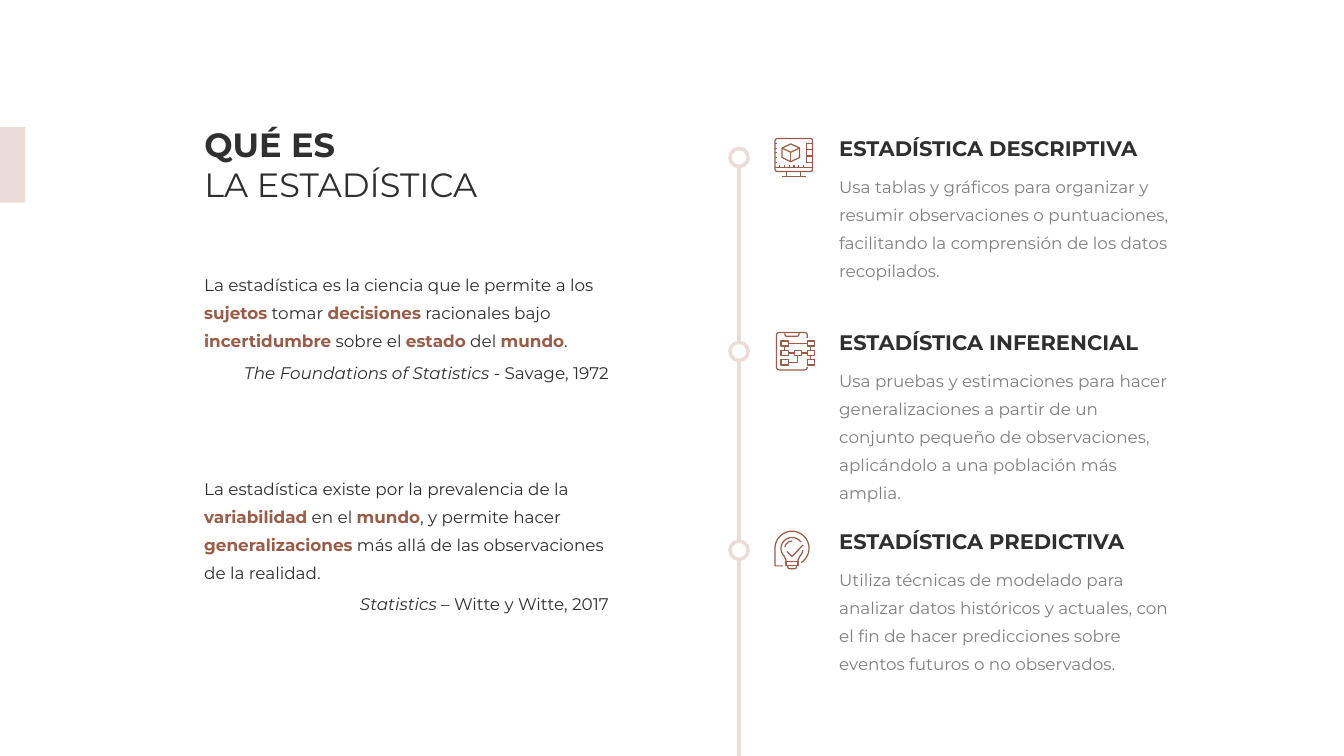
from math import cos, radians, sin

from lxml import etree
from pptx import Presentation
from pptx.dml.color import RGBColor
from pptx.enum.shapes import MSO_CONNECTOR, MSO_SHAPE
from pptx.enum.text import MSO_ANCHOR, MSO_AUTO_SIZE, PP_ALIGN
from pptx.oxml.ns import qn
from pptx.util import Pt

LEFT, RIGHT = PP_ALIGN.LEFT, PP_ALIGN.RIGHT
TOP, MIDDLE = MSO_ANCHOR.TOP, MSO_ANCHOR.MIDDLE
NO_AUTOSIZE = MSO_AUTO_SIZE.NONE
RECTANGLE, OVAL = MSO_SHAPE.RECTANGLE, MSO_SHAPE.OVAL
STRAIGHT = MSO_CONNECTOR.STRAIGHT

INK = RGBColor(0x2F, 0x2F, 0x2F)
GRAY = RGBColor(0x7F, 0x7F, 0x7F)
BROWN = RGBColor(0x99, 0x5C, 0x49)
BLUSH = RGBColor(0xEC, 0xDC, 0xD7)
WHITE = RGBColor(0xFF, 0xFF, 0xFF)

TITLE = {"name": "Montserrat", "size": Pt(48), "bold": True}
SUBTITLE = {**TITLE, "bold": False}
HEADING = {**TITLE, "size": Pt(30)}
BODY = {"name": "Montserrat", "size": Pt(24), "bold": False}
STRONG = {**BODY, "bold": True}
ITALIC = {**BODY, "italic": True}
SINGLE = {"alignment": LEFT}
SPACED = {"alignment": LEFT, "line_spacing": Pt(40), "space_before": Pt(4.8)}
SPACED_RIGHT = {**SPACED, "alignment": RIGHT}

QUOTES = [
    (378, 170, "La estadística es la ciencia que le permite a los *sujetos* tomar "
     "*decisiones* racionales bajo *incertidumbre* sobre el *estado* del *mundo*.",
     "The Foundations of Statistics ", "- Savage, 1972"),
    (669, 211, "La estadística existe por la prevalencia de la *variabilidad* en el "
     "*mundo*, y permite hacer *generalizaciones* más allá de las observaciones "
     "de la realidad.",
     "Statistics ", "– Witte y Witte, 2017"),
]


def set_format(target, values):
    for name, value in values.items():
        setattr(target, name, value)


def write_paragraph(paragraph, runs, layout):
    set_format(paragraph, layout)
    for text, style, color in runs:
        run = paragraph.add_run()
        run.text = text
        set_format(run.font, style)
        run.font.color.rgb = color


def write_text(shape, paragraphs, wrap=True, anchor=TOP):
    frame = shape.text_frame
    set_format(frame, {"word_wrap": wrap, "vertical_anchor": anchor,
                       "auto_size": NO_AUTOSIZE})
    for index, (runs, layout) in enumerate(paragraphs):
        paragraph = frame.add_paragraph() if index else frame.paragraphs[0]
        write_paragraph(paragraph, runs, layout)


def add_textbox(slide, box, paragraphs, **options):
    write_text(slide.shapes.add_textbox(*map(Pt, box)), paragraphs, **options)


def add_shape(slide, kind, box, fill, line=None):
    shape = slide.shapes.add_shape(kind, *map(Pt, box))
    shape.shadow.inherit = False
    shape.fill.solid()
    shape.fill.fore_color.rgb = fill
    if line:
        shape.line.color.rgb = line
        shape.line.width = Pt(5)
    else:
        shape.line.fill.background()


def arc(x, y, radius, start, end):
    steps = max(3, abs(end - start) // 6)
    angles = [radians(start + (end - start) * i / steps) for i in range(steps + 1)]
    return [(x + radius * cos(a), y + radius * sin(a)) for a in angles]


def rectangle(left, top, right, bottom):
    return [(left, top), (right, top), (right, bottom), (left, bottom), (left, top)]


def rounded(left, top, right, bottom, radius):
    return (arc(right - radius, top + radius, radius, 0, -90)
            + arc(left + radius, top + radius, radius, 270, 180)
            + arc(left + radius, bottom - radius, radius, 180, 90)
            + arc(right - radius, bottom - radius, radius, 90, 0))


def monitor_strokes():
    screen = rounded(1, 1, 54.5, 48, 3)
    ticks = [[(1, 7.9 + 6.75 * i), (3.6, 7.9 + 6.75 * i)] for i in range(5)]
    ticks += [[(7.6 + 6.75 * i, 39), (7.6 + 6.75 * i, 42)] for i in range(6)]
    panel = [[(54.5, 8), (45.7, 8), (45.7, 35), (54.5, 35)]]
    panel += [[(45.7, y), (54.5, y)] for y in (17, 26)]
    stand = [[(x, 48), (x, 55)] for x in (17.6, 37.8)] + [[(10.8, 55), (45, 55)]]
    cube = [[(23.3, 8.6), (36, 14.5), (36, 28), (23.3, 34), (11, 28), (11, 14.5),
             (23.3, 8.6)],
            [(11, 14.5), (23.3, 20.5), (36, 14.5)], [(23.3, 20.5), (23.3, 34)]]
    return [screen + screen[:1], [(1, 42), (54.5, 42)], *ticks, *panel, *stand, *cube]


def clipboard_strokes():
    board = [(47, 9), *rounded(3, 1, 47, 54.5, 4), (47, 51)]
    clip = [(15, 1), *arc(18, 3.5, 3, 180, 90), *arc(32, 3.5, 3, 90, 0), (35, 1)]
    nodes = [rectangle(x, y, x + 10.3, y + 7.4)
             for x in (9.5, 47) for y in (13, 26.5, 40)]
    links = [[(19.8, 16.8), (47, 16.8)], [(14.6, 20.4), (14.6, 26.5)],
             [(52, 20.4), (52, 26.5)], [(52, 33.9), (52, 40)],
             [(19.8, 30.2), (28.3, 30.2)], [(38.6, 30.2), (47, 30.2)],
             [(33.4, 33.9), (33.4, 43.7), (19.8, 43.7)]]
    return [board, clip, *nodes, rectangle(28.3, 26.5, 38.6, 33.9), *links]


def bulb_strokes():
    head = [(12, 50.4), (1, 50.4), *arc(25.2, 25.2, 24.3, 180, 417)]
    glass = [(16.6, 44.6), (16.6, 42), *arc(25.2, 25.6, 15.7, 135, 324)]
    side = [*arc(25.2, 25.6, 15.7, 9, 45), (33.8, 42), (33.8, 44.6)]
    base = [(19, 49.7), *arc(22, 51.5, 3, 180, 90), *arc(28.7, 51.5, 3, 90, 0),
            (31.7, 49.7)]
    check = [(17.9, 29.8), (25.2, 37.2), (41, 20.4)]
    return [head, glass, side, rectangle(16.6, 44.6, 33.8, 49.7), base, check,
            arc(25.2, 25.2, 10.2, 188, 270)]


def add_icon(slide, left, top, strokes):
    builder = None
    for stroke in strokes:
        points = [(Pt(left + x), Pt(top + y)) for x, y in stroke]
        if builder:
            builder.move_to(*points[0])
        else:
            builder = slide.shapes.build_freeform(*points[0])
        builder.add_line_segments(points[1:], close=False)
    shape = builder.convert_to_shape()
    shape.shadow.inherit = False
    shape.fill.background()
    shape.line.color.rgb = BROWN
    shape.line.width = Pt(1.75)


def add_title(slide, left, top, width, height):
    title = slide.shapes.title
    set_format(title, {"left": Pt(left), "top": Pt(top),
                       "width": Pt(width), "height": Pt(height)})
    write_text(title, [([("QUÉ ES", TITLE, INK)], SINGLE),
                       ([("LA ESTADÍSTICA", SUBTITLE, INK)], SINGLE)], wrap=False)


def add_quote(slide, box, quote, work, author):
    runs = [(text, STRONG, BROWN) if index % 2 else (text, BODY, INK)
            for index, text in enumerate(quote.split("*"))]
    source = [(work, ITALIC, INK), (author, BODY, INK)]
    add_textbox(slide, box, [(runs, SPACED), (source, SPACED_RIGHT)])


def add_timeline(slide, left, top, bottom):
    line = slide.shapes.add_connector(STRAIGHT, Pt(left), Pt(top), Pt(left), Pt(bottom))
    line.line.color.rgb = BLUSH
    line.line.width = Pt(5)
    etree.SubElement(line._element.spPr, qn("a:effectLst"))


def add_branch(slide, left, top, height, heading, body, strokes):
    add_shape(slide, OVAL, (left, top, 26, 26), WHITE, BLUSH)
    add_icon(slide, left + 63.5, top - 15, strokes)
    add_textbox(slide, (left + 149, top - 22, 443, 44),
                [([(heading, HEADING, INK)], SINGLE)], wrap=False, anchor=MIDDLE)
    add_textbox(slide, (left + 149, top + 26, 493, height),
                [([(body, BODY, GRAY)], SPACED)])


def main():
    presentation = Presentation()
    presentation.slide_width, presentation.slide_height = Pt(1919.5), Pt(1080)
    slide = presentation.slides.add_slide(presentation.slide_layouts[5])
    branches = [
        (212, 165, "ESTADÍSTICA DESCRIPTIVA",
         "Usa tablas y gráficos para organizar y resumir observaciones o puntuaciones, "
         "facilitando la comprensión de los datos recopilados.", monitor_strokes()),
        (489, 205, "ESTADÍSTICA INFERENCIAL",
         "Usa pruebas y estimaciones para hacer generalizaciones a partir de un conjunto "
         "pequeño de observaciones, aplicándolo a una población más amplia.",
         clipboard_strokes()),
        (773, 165, "ESTADÍSTICA PREDICTIVA",
         "Utiliza técnicas de modelado para analizar datos históricos y actuales, con el "
         "fin de hacer predicciones sobre eventos futuros o no observados.",
         bulb_strokes()),
    ]
    add_title(slide, 284.5, 173.5, 424, 124)
    add_shape(slide, RECTANGLE, (0, 181.5, 36, 108), BLUSH)
    for top, height, *texts in QUOTES:
        add_quote(slide, (284.5, top, 592, height), *texts)
    add_timeline(slide, 1055.5, 225, 1080)
    for branch in branches:
        add_branch(slide, 1042.5, *branch)
    presentation.save("out.pptx")


if __name__ == "__main__":
    main()
